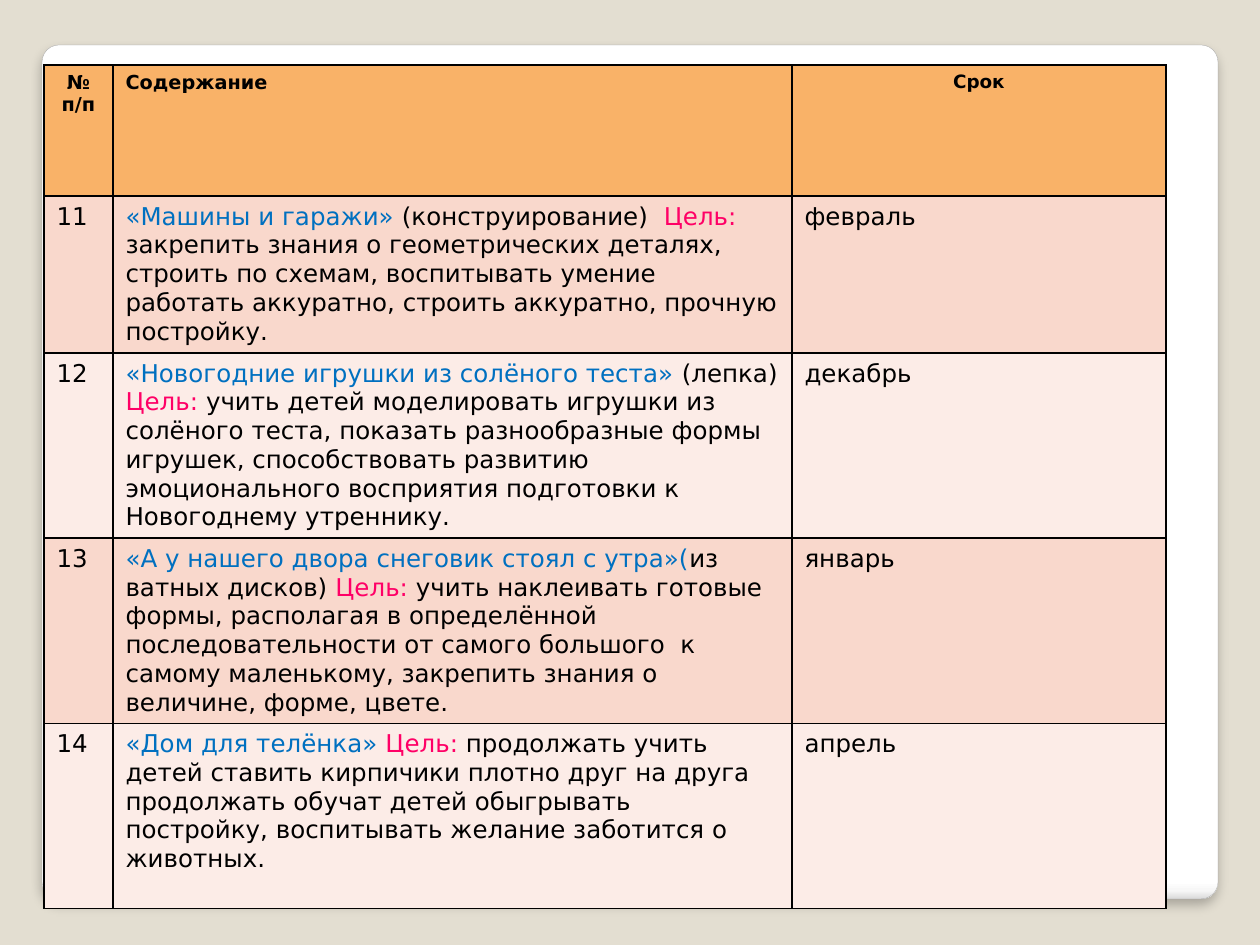
from lxml import etree
from pptx import Presentation
from pptx.dml.color import RGBColor
from pptx.enum.shapes import MSO_SHAPE
from pptx.enum.text import PP_ALIGN
from pptx.oxml import parse_xml
from pptx.oxml.ns import nsdecls, qn
from pptx.util import Pt

ROUND = MSO_SHAPE.ROUNDED_RECTANGLE
LEFT, MID = PP_ALIGN.LEFT, PP_ALIGN.CENTER
FONT = "DejaVu Sans"
BLUE, PINK, BLACK = "0070C0", "FF0066", "000000"
HEAD, BANDS = "F9B268", ("F9D8CC", "FCECE7")
STOPS = [(0, "FFFFFF"), (98, "FFFFFF"), (99, "F7F7F7"), (100, "DADADA")]
GOAL = "Цель: "

TITLES = [("№\nп/п", 11, MID), ("Содержание", 11, LEFT), ("Срок", 10.5, MID)]
TASKS = [
    ("11", "«Машины и гаражи» ", "(конструирование)  ",
     "закрепить знания о геометрических деталях, строить по схемам, "
     "воспитывать умение работать аккуратно, строить аккуратно, прочную постройку.",
     "февраль"),
    ("12", "«Новогодние игрушки из солёного теста» ", "(лепка) ",
     "учить детей моделировать игрушки из солёного теста, показать разнообразные "
     "формы игрушек, способствовать развитию эмоционального восприятия подготовки "
     "к Новогоднему утреннику.",
     "декабрь"),
    ("13", "«А у нашего двора снеговик стоял с утра»(", "из ватных дисков) ",
     "учить наклеивать готовые формы, располагая в определённой последовательности "
     "от самого большого  к самому маленькому, закрепить знания о величине, форме, цвете.",
     "январь"),
    ("14", "«Дом для телёнка» ", "",
     "продолжать учить детей ставить кирпичики плотно друг на друга продолжать "
     "обучат детей обыгрывать постройку, воспитывать желание заботится о животных.",
     "апрель"),
]
COLS = [69, 679, 374]
ROWS = [131, 157, 185, 185, 185]


def px(n):
    return round(n * 914400 / 126)


def rgb(code):
    return RGBColor.from_string(code)


def add_card(slide):
    card = slide.shapes.add_shape(ROUND, px(42), px(45), px(1176), px(854))
    card.adjustments[0] = 0.02
    card.line.color.rgb = rgb("A4A4A4")
    card.line.width = Pt(0.16)
    card.shadow.inherit = False
    props = card.element.spPr
    stops = "".join(
        f'<a:gs pos="{pos * 1000}"><a:srgbClr val="{code}"/></a:gs>'
        for pos, code in STOPS)
    props.insert(2, parse_xml(
        f'<a:gradFill {nsdecls("a")}><a:gsLst>{stops}</a:gsLst>'
        '<a:lin ang="5400000" scaled="0"/></a:gradFill>'))
    props.find(qn("a:effectLst")).append(parse_xml(
        f'<a:outerShdw {nsdecls("a")} blurRad="{Pt(6)}" dist="{Pt(4)}" dir="5400000">'
        '<a:srgbClr val="000000"><a:alpha val="25000"/></a:srgbClr></a:outerShdw>'))


def style(cell, fill):
    props = cell._tc.get_or_add_tcPr()
    for side in "LRTB":
        line = etree.SubElement(props, qn(f"a:ln{side}"), w=str(Pt(1)))
        paint = etree.SubElement(line, qn("a:solidFill"))
        etree.SubElement(paint, qn("a:srgbClr"), val=BLACK)
    cell.fill.solid()
    cell.fill.fore_color.rgb = rgb(fill)


def write(cell, runs, size=14, bold=False, align=LEFT):
    para = cell.text_frame.paragraphs[0]
    for text, code in runs:
        for i, part in enumerate(text.split("\n")):
            if i:
                para = cell.text_frame.add_paragraph()
            run = para.add_run()
            run.text = part
            run.font.color.rgb = rgb(code)
    for para in cell.text_frame.paragraphs:
        para.alignment = align
        para.font.name = FONT
        para.font.size = Pt(size)
        para.font.bold = bold


def add_plan(slide):
    table = slide.shapes.add_table(
        len(ROWS), len(COLS), px(44), px(65), px(sum(COLS)), px(sum(ROWS))).table
    for col, wide in zip(table.columns, COLS):
        col.width = px(wide)
    for row, high in zip(table.rows, ROWS):
        row.height = px(high)
    for i, row in enumerate(table.rows):
        for cell in row.cells:
            style(cell, BANDS[(i - 1) % 2] if i else HEAD)
    for c, (text, size, align) in enumerate(TITLES):
        write(table.cell(0, c), [(text, BLACK)], size, True, align)
    for r, (num, name, kind, aim, month) in enumerate(TASKS, 1):
        body = [(name, BLUE), (kind, BLACK), (GOAL, PINK), (aim, BLACK)]
        write(table.cell(r, 0), [(num, BLACK)])
        write(table.cell(r, 1), [part for part in body if part[0]])
        write(table.cell(r, 2), [(month, BLACK)])


def main():
    deck = Presentation()
    deck.slide_width, deck.slide_height = px(1260), px(945)
    slide = deck.slides.add_slide(deck.slide_layouts[6])
    back = slide.background.fill
    back.solid()
    back.fore_color.rgb = rgb("E3DED1")
    add_card(slide)
    add_plan(slide)
    deck.save("out.pptx")


if __name__ == "__main__":
    main()
